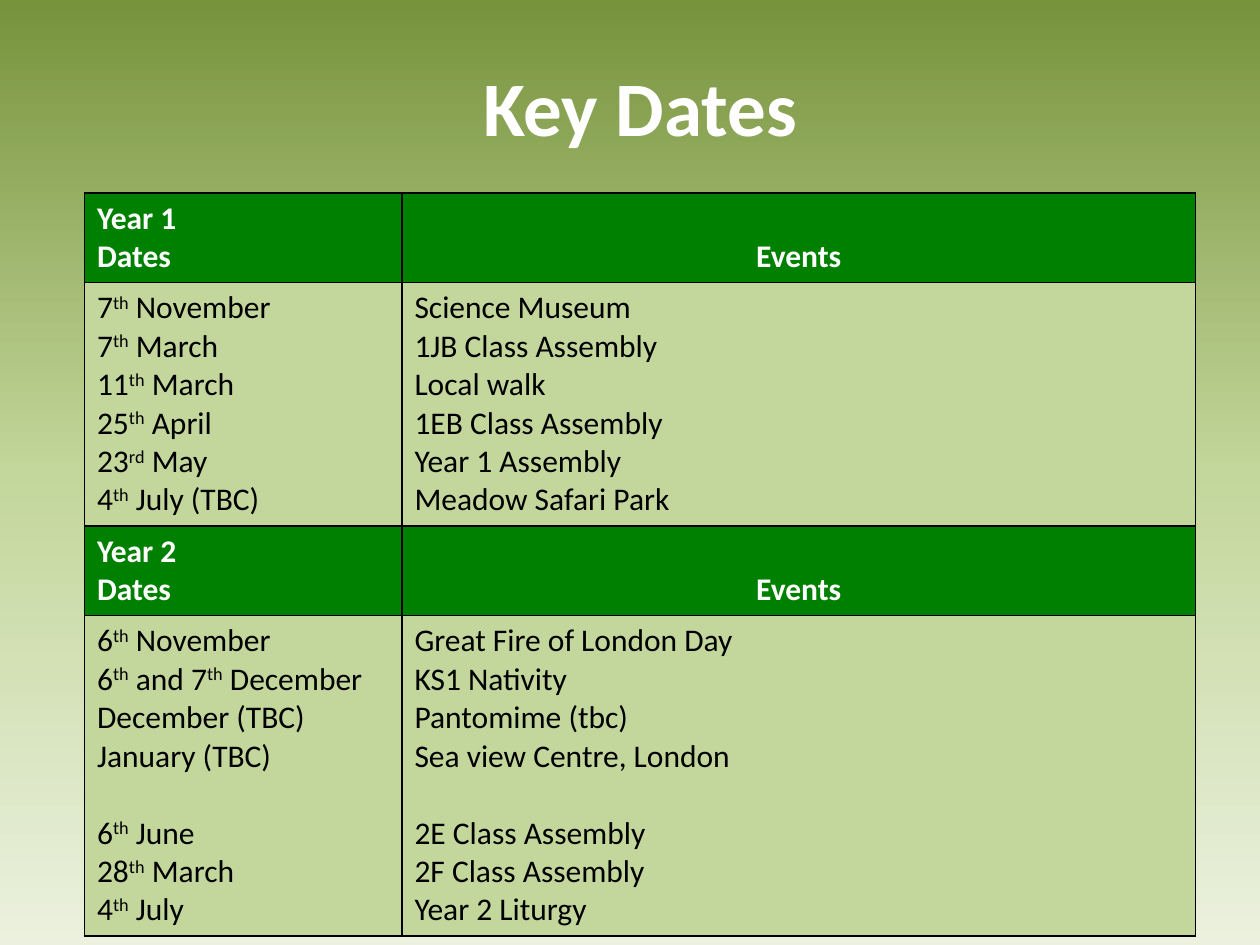
from lxml.etree import SubElement
from pptx import Presentation
from pptx.dml.color import RGBColor
from pptx.enum.text import MSO_ANCHOR, PP_ALIGN
from pptx.oxml.ns import qn
from pptx.util import Inches, Pt

HUES = {"white": "FFFFFF", "black": "000000", "head": "008000", "body": "C3D69B"}
STOPS = [(0, "77933C"), (50, "C3D69B"), (100, "EBF1DE")]
FONT = "Calibri"
LINE = 22  # height of a text line, in points

# Each year: heading, (date, event) pairs, index of the pair with a gap above.
# Text between carets is superscript.
YEARS = [
    ("Year 1", [
        ("7^th^ November", "Science Museum"),
        ("7^th^ March", "1JB Class Assembly"),
        ("11^th^ March", "Local walk"),
        ("25^th^ April", "1EB Class Assembly"),
        ("23^rd^ May", "Year 1 Assembly"),
        ("4^th^ July (TBC)", "Meadow Safari Park"),
    ], None),
    ("Year 2", [
        ("6^th^ November", "Great Fire of London Day"),
        ("6^th^ and 7^th^ December", "KS1 Nativity"),
        ("December (TBC)", "Pantomime (tbc)"),
        ("January (TBC)", "Sea view Centre, London"),
        ("6^th^ June", "2E Class Assembly"),
        ("28^th^ March", "2F Class Assembly"),
        ("4^th^ July", "Year 2 Liturgy"),
    ], 4),
]


def rgb(name):
    return RGBColor.from_string(HUES[name])


def add_runs(para, text, size, hue, bold):
    for i, part in enumerate(text.split("^")):
        run = para.add_run()
        run.text = part
        font = run.font
        font.name, font.size, font.bold = FONT, Pt(size), bold
        font.color.rgb = rgb(hue)
        if i % 2:
            run._r.get_or_add_rPr().set("baseline", "30000")


def set_back(slide):
    """Fill the background with a gradient that runs downwards."""
    fill = slide.background.fill
    fill.gradient()
    fill.gradient_angle = 270
    stops = slide.element.find(".//" + qn("a:gsLst"))
    for old in list(stops):
        stops.remove(old)
    for pos, hue in STOPS:
        stop = SubElement(stops, qn("a:gs"), pos=str(pos * 1000))
        SubElement(stop, qn("a:srgbClr"), val=hue)


def set_title(slide, left, top, width, height):
    title = slide.shapes.title
    title.left, title.top, title.width, title.height = left, top, width, height
    frame = title.text_frame
    frame.vertical_anchor = MSO_ANCHOR.MIDDLE
    para = frame.paragraphs[0]
    para.alignment = PP_ALIGN.CENTER
    add_runs(para, "Key Dates", 44, "white", True)


def add_edges(cell):
    props = cell._tc.get_or_add_tcPr()
    for side in ("lnL", "lnR", "lnT", "lnB"):
        edge = SubElement(props, qn("a:" + side), w=str(Pt(1)))
        fill = SubElement(edge, qn("a:solidFill"))
        SubElement(fill, qn("a:srgbClr"), val=HUES["black"])


def fill_cell(cell, lines, head=False, gap=None):
    add_edges(cell)
    cell.fill.solid()
    cell.fill.fore_color.rgb = rgb("head" if head else "body")
    frame = cell.text_frame
    for i, line in enumerate(lines):
        para = frame.add_paragraph() if i else frame.paragraphs[0]
        if i == gap:
            para.space_before = Pt(LINE)
        add_runs(para, line, 18, "white" if head else "black", head)


def add_dates(slide, left, top, width):
    counts = []
    for _, pairs, gap in YEARS:
        counts += [2, len(pairs) + (gap is not None)]
    highs = [Pt(n * LINE) + Inches(0.1) for n in counts]
    table = slide.shapes.add_table(
        len(highs), 2, left, top, width, sum(highs)).table
    table.first_row = table.horz_banding = False
    table.columns[0].width = Inches(2.52)
    table.columns[1].width = width - Inches(2.52)
    for row, high in zip(table.rows, highs):
        row.height = high
    for i, (year, pairs, gap) in enumerate(YEARS):
        row = 2 * i
        fill_cell(table.cell(row, 0), [year, "Dates"], head=True)
        label = table.cell(row, 1)
        fill_cell(label, ["Events"], head=True)
        label.vertical_anchor = MSO_ANCHOR.BOTTOM
        label.text_frame.paragraphs[0].alignment = PP_ALIGN.CENTER
        for col, lines in enumerate(zip(*pairs)):
            fill_cell(table.cell(row + 1, col), lines, gap=gap)


def main():
    deck = Presentation()
    deck.slide_width, deck.slide_height = Inches(10), Inches(7.5)
    slide = deck.slides.add_slide(deck.slide_layouts[5])
    set_back(slide)
    set_title(slide, Inches(0.83), Inches(0.29), Inches(8.5), Inches(1.1))
    add_dates(slide, Inches(0.67), Inches(1.53), Inches(8.82))
    deck.save("out.pptx")


if __name__ == "__main__":
    main()
